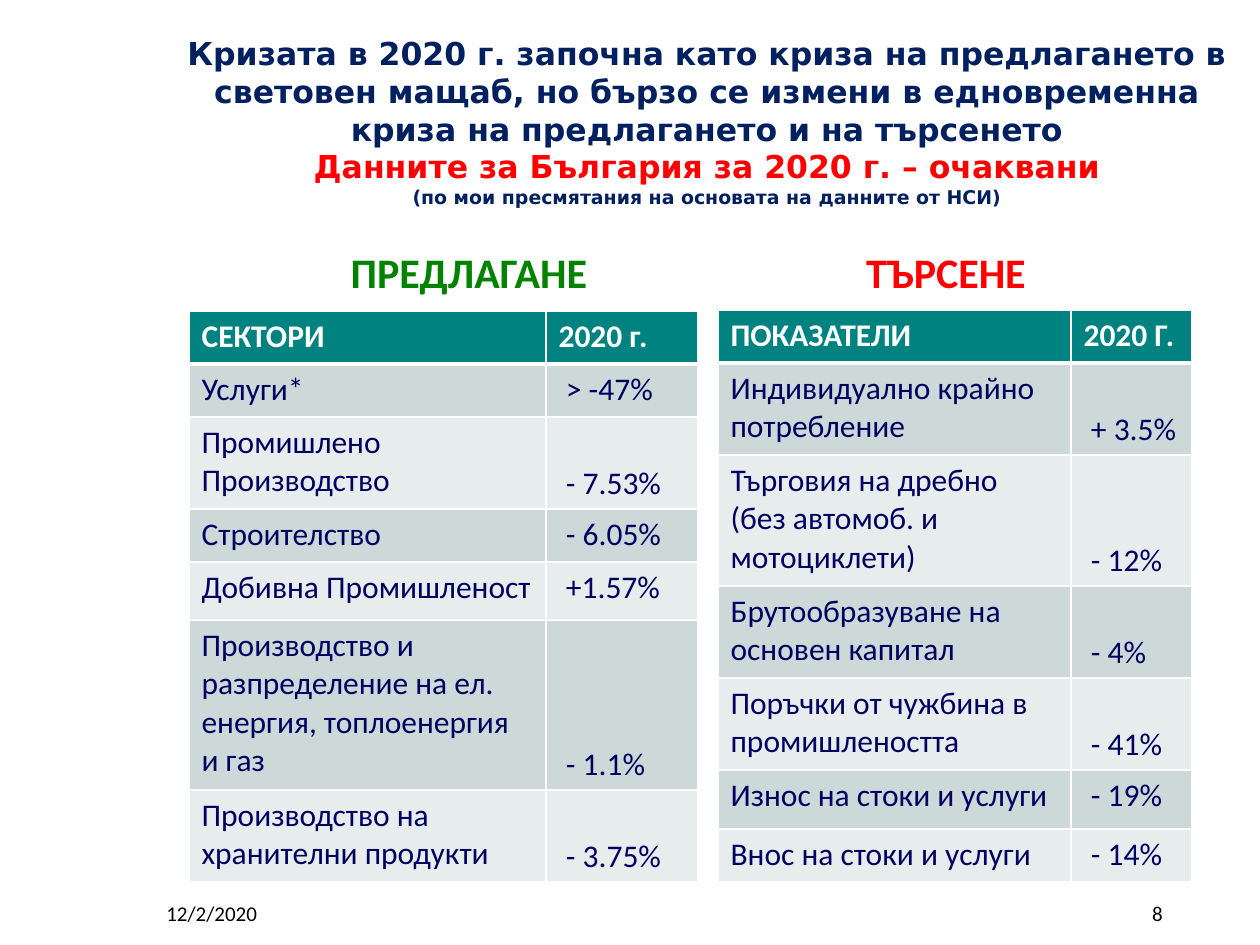
from dataclasses import dataclass

from lxml import etree
from pptx import Presentation
from pptx.dml.color import RGBColor
from pptx.enum.text import MSO_ANCHOR, PP_ALIGN
from pptx.oxml.ns import qn
from pptx.util import Emu, Pt

TOP, MIDDLE, BOTTOM = MSO_ANCHOR.TOP, MSO_ANCHOR.MIDDLE, MSO_ANCHOR.BOTTOM
LEFT, CENTER, RIGHT = PP_ALIGN.LEFT, PP_ALIGN.CENTER, PP_ALIGN.RIGHT
EMU_PER_PX = 914400 / 126


@dataclass(frozen=True)
class Theme:
    title_font: str = "DejaVu Sans"
    body_font: str = "Calibri"
    navy: str = "002060"
    red: str = "FF0000"
    green: str = "018300"
    white: str = "FFFFFF"
    black: str = "000000"
    header_fill: str = "008380"
    cell_text: str = "000060"
    bands: tuple = ("CCD9D8", "E7EDED")
    title_size: float = 18
    note_size: float = 10.8
    heading_size: float = 24
    table_size: float = 18
    footer_size: float = 12


THEME = Theme()

TITLE_BOX = (154, 10, 1106, 222)
TITLE_LINES = [
    ("Кризата в 2020 г. започна като криза на предлагането в световен мащаб, "
     "но бързо се измени в едновременна криза на предлагането и на търсенето",
     THEME.title_size, THEME.navy),
    ("Данните за България за 2020 г. – очаквани", THEME.title_size, THEME.red),
    ("(по мои пресмятания на основата на данните от НСИ)", THEME.note_size, THEME.navy),
]

# Each row: label, value, height in px
SUPPLY = {
    "heading": "ПРЕДЛАГАНЕ", "color": THEME.green, "heading_box": (241, 233, 456, 78),
    "origin": (189, 311), "columns": (357, 152),
    "rows": [
        ("СЕКТОРИ", "2020 г.", 53),
        ("Услуги*", "> -47%", 53),
        ("Промишлено Производство", "- 7.53%", 92),
        ("Строителство", "- 6.05%", 53),
        ("Добивна Промишленост", "+1.57%", 58),
        ("Производство и разпределение на ел. енергия, топлоенергия и газ", "- 1.1%", 170),
        ("Производство на хранителни продукти", "- 3.75%", 92),
    ],
}
DEMAND = {
    "heading": "ТЪРСЕНЕ", "color": THEME.red, "heading_box": (718, 233, 456, 78),
    "origin": (718, 310), "columns": (353, 121),
    "rows": [
        ("ПОКАЗАТЕЛИ", "2020 Г.", 53),
        ("Индивидуално крайно потребление", "+ 3.5%", 92),
        ("Търговия на дребно (без автомоб. и мотоциклети)", "- 12%", 131),
        ("Брутообразуване на основен капитал", "- 4%", 92),
        ("Поръчки от чужбина в промишлеността", "- 41%", 92),
        ("Износ на стоки и услуги", "- 19%", 59),
        ("Внос на стоки и услуги", "- 14%", 53),
    ],
}
FOOTERS = [
    ("12/2/2020", (154, 888, 253, 50), LEFT),
    ("8", (917, 888, 258, 50), RIGHT),
]

VALUE_INDENT = 20
ONE_LINE_MAX = 60


def px(value):
    return Emu(round(value * EMU_PER_PX))


def style(font, name, size, color, bold=False):
    font.name, font.size, font.bold = name, Pt(size), bold
    font.color.rgb = RGBColor.from_string(color)


def add_text_box(slide, box, align):
    """Add a wrapping, vertically centred box and return its paragraph."""
    frame = slide.shapes.add_textbox(*map(px, box)).text_frame
    frame.word_wrap = True
    frame.vertical_anchor = MIDDLE
    paragraph = frame.paragraphs[0]
    paragraph.alignment = align
    return paragraph


def add_title(slide):
    paragraph = add_text_box(slide, TITLE_BOX, CENTER)
    for index, (text, size, color) in enumerate(TITLE_LINES):
        if index:
            paragraph.add_line_break()
        run = paragraph.add_run()
        run.text = text
        style(run.font, THEME.title_font, size, color, bold=True)


def add_label(slide, text, box, align, size, color, bold=False):
    paragraph = add_text_box(slide, box, align)
    paragraph.text = text
    style(paragraph.font, THEME.body_font, size, color, bold)


def set_borders(cell, top, bottom):
    """Draw white cell edges; call before the fill, which must follow in the XML."""
    properties = cell._tc.get_or_add_tcPr()
    for side, width in (("L", 1), ("R", 1), ("T", top), ("B", bottom)):
        line = etree.SubElement(properties, qn(f"a:ln{side}"), w=str(Pt(width)))
        fill = etree.SubElement(line, qn("a:solidFill"))
        etree.SubElement(fill, qn("a:srgbClr"), val=THEME.white)


def add_data_table(slide, panel):
    rows, columns = panel["rows"], panel["columns"]
    size = (sum(columns), sum(height for *_, height in rows))
    frame = slide.shapes.add_table(
        len(rows), len(columns), *map(px, panel["origin"] + size))
    table = frame.table
    for column, width in zip(table.columns, columns):
        column.width = px(width)
    for row_index, (*texts, height) in enumerate(rows):
        table.rows[row_index].height = px(height)
        is_header = row_index == 0
        fill = THEME.header_fill if is_header else THEME.bands[(row_index - 1) % 2]
        color = THEME.white if is_header else THEME.cell_text
        for column_index, text in enumerate(texts):
            cell = table.cell(row_index, column_index)
            set_borders(cell, 3 if row_index == 1 else 1, 3 if is_header else 1)
            cell.fill.solid()
            cell.fill.fore_color.rgb = RGBColor.from_string(fill)
            is_value = column_index == 1 and not is_header
            if is_value:
                cell.margin_left = px(VALUE_INDENT)
            cell.vertical_anchor = BOTTOM if is_value and height > ONE_LINE_MAX else TOP
            cell.text = text
            style(cell.text_frame.paragraphs[0].font, THEME.body_font,
                  THEME.table_size, color, bold=is_header)


def main():
    presentation = Presentation()
    presentation.slide_width, presentation.slide_height = px(1260), px(945)
    slide = presentation.slides.add_slide(presentation.slide_layouts[6])
    add_title(slide)
    for panel in (SUPPLY, DEMAND):
        add_label(slide, panel["heading"], panel["heading_box"], CENTER,
                  THEME.heading_size, panel["color"], bold=True)
        add_data_table(slide, panel)
    for text, box, align in FOOTERS:
        add_label(slide, text, box, align, THEME.footer_size, THEME.black)
    presentation.save("out.pptx")


if __name__ == "__main__":
    main()
